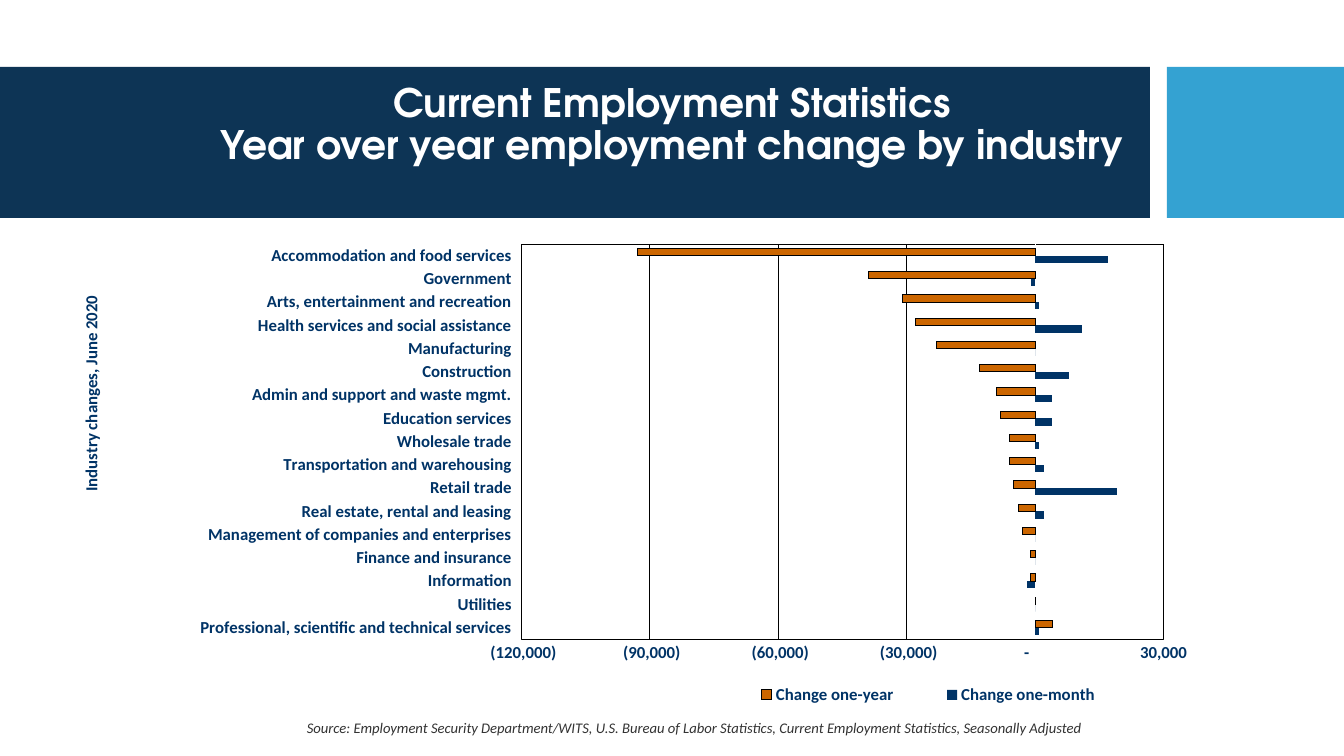
from dataclasses import dataclass

from lxml import etree
from pptx import Presentation
from pptx.chart.data import CategoryChartData
from pptx.dml.color import RGBColor
from pptx.enum.chart import XL_CHART_TYPE, XL_LEGEND_POSITION, XL_TICK_LABEL_POSITION, XL_TICK_MARK
from pptx.enum.shapes import MSO_SHAPE
from pptx.enum.text import MSO_ANCHOR, PP_ALIGN
from pptx.oxml import parse_xml
from pptx.oxml.ns import nsdecls, qn
from pptx.util import Emu, Pt

RECTANGLE = MSO_SHAPE.RECTANGLE
CLUSTERED = XL_CHART_TYPE.BAR_CLUSTERED
BOTTOM = XL_LEGEND_POSITION.BOTTOM
LOW = XL_TICK_LABEL_POSITION.LOW
NO_TICK = XL_TICK_MARK.NONE
MIDDLE, TOP = MSO_ANCHOR.MIDDLE, MSO_ANCHOR.TOP
CENTER, LEFT = PP_ALIGN.CENTER, PP_ALIGN.LEFT

WHITE = RGBColor(0xFF, 0xFF, 0xFF)
BLACK = RGBColor(0x00, 0x00, 0x00)
GRAY = RGBColor(0x33, 0x33, 0x33)
BANNER_NAVY = RGBColor(0x0D, 0x34, 0x55)
SKY_BLUE = RGBColor(0x34, 0xA2, 0xD2)
CHART_NAVY = RGBColor(0x00, 0x33, 0x66)
ORANGE = RGBColor(0xCC, 0x66, 0x00)

EMU_PER_PX = 914400 / 100.8
NUMBER_FORMAT = r'_(* #,##0_);_(* \(#,##0\);_(* "-"??_);_(@_)'
CHART_FONT = {"name": "Calibri", "size": Pt(12), "bold": True}


@dataclass(frozen=True)
class Area:
    left: int
    top: int
    width: int
    height: int

    def emu(self) -> list[Emu]:
        return [px(n) for n in (self.left, self.top, self.width, self.height)]


@dataclass(frozen=True)
class Panel:
    area: Area
    color: RGBColor


@dataclass(frozen=True)
class Caption:
    area: Area
    text: str
    font: dict
    color: RGBColor
    align: PP_ALIGN
    anchor: MSO_ANCHOR
    line_spacing: float


@dataclass(frozen=True)
class Industry:
    name: str
    month: int
    year: int


PANELS = [
    Panel(Area(0, 67, 1150, 151), BANNER_NAVY),
    Panel(Area(1167, 67, 177, 151), SKY_BLUE),
]
CAPTIONS = [
    Caption(
        Area(142, 64, 1060, 123),
        "Current Employment Statistics\vYear over year employment change by industry",
        {"name": "TeX Gyre Adventor", "size": Pt(28), "bold": True},
        WHITE, CENTER, MIDDLE, 0.9,
    ),
    Caption(
        Area(297, 714, 863, 28),
        "Source: Employment Security Department/WITS, U.S. Bureau of Labor Statistics, "
        "Current Employment Statistics, Seasonally Adjusted",
        {"name": "Calibri", "size": Pt(10.5), "italic": True},
        GRAY, LEFT, TOP, 1.0,
    ),
]
CHART_AREA = Area(65, 235, 1159, 479)

# Bottom to top on the chart
INDUSTRIES = [
    Industry("Professional, scientific and technical services", 1000, 4000),
    Industry("Utilities", 0, 0),
    Industry("Information", -2000, -1000),
    Industry("Finance and insurance", 0, -1000),
    Industry("Management of companies and enterprises", 0, -3000),
    Industry("Real estate, rental and leasing", 2000, -4000),
    Industry("Retail trade", 19000, -5000),
    Industry("Transportation and warehousing", 2000, -6000),
    Industry("Wholesale trade", 1000, -6000),
    Industry("Education services", 4000, -8000),
    Industry("Admin and support and waste mgmt.", 4000, -9000),
    Industry("Construction", 8000, -13000),
    Industry("Manufacturing", 0, -23000),
    Industry("Health services and social assistance", 11000, -28000),
    Industry("Arts, entertainment and recreation", 1000, -31000),
    Industry("Government", -1000, -39000),
    Industry("Accommodation and food services", 17000, -93000),
]


def px(length: int) -> Emu:
    return Emu(round(length * EMU_PER_PX))


def style_font(font, values: dict, color: RGBColor) -> None:
    for key, value in values.items():
        setattr(font, key, value)
    font.color.rgb = color


def add_panel(page, panel: Panel) -> None:
    box = page.shapes.add_shape(RECTANGLE, *panel.area.emu())
    box.shadow.inherit = False
    box.fill.solid()
    box.fill.fore_color.rgb = panel.color
    box.line.fill.background()


def add_caption(page, caption: Caption) -> None:
    frame = page.shapes.add_textbox(*caption.area.emu()).text_frame
    frame.word_wrap = True
    frame.vertical_anchor = caption.anchor
    para = frame.paragraphs[0]
    para.text = caption.text
    para.alignment = caption.align
    para.line_spacing = caption.line_spacing
    for span in para.runs:
        style_font(span.font, caption.font, caption.color)


def set_layout(parent, before: tuple, **values) -> None:
    """Place a chart part by fractions of the chart area."""
    for old in parent.findall(qn("c:layout")):
        parent.remove(old)
    layout = parse_xml(f"<c:layout {nsdecls('c')}><c:manualLayout/></c:layout>")
    for tag, value in values.items():
        etree.SubElement(layout[0], qn(f"c:{tag}"), val=str(value))
    index = max((i + 1 for i, child in enumerate(parent)
                 if child.tag in map(qn, before)), default=0)
    parent.insert(index, layout)


def add_employment_chart(page) -> None:
    data = CategoryChartData(number_format="#,##0")
    data.categories = [industry.name for industry in INDUSTRIES]
    data.add_series("Change one-month", [industry.month for industry in INDUSTRIES])
    data.add_series("Change one-year", [industry.year for industry in INDUSTRIES])
    chart = page.shapes.add_chart(CLUSTERED, *CHART_AREA.emu(), data).chart
    style_font(chart.font, CHART_FONT, CHART_NAVY)
    chart.has_title = False

    # Bars
    plot = chart.plots[0]
    plot.gap_width, plot.overlap, plot.vary_by_categories = 122, 0, False
    for series, color in zip(plot.series, (CHART_NAVY, ORANGE)):
        series.invert_if_negative = False
        series.format.fill.solid()
        series.format.fill.fore_color.rgb = color
    year_line = plot.series[1].format.line
    year_line.color.rgb, year_line.width = BLACK, Pt(0)

    # Axes
    industries, change = chart.category_axis, chart.value_axis
    for axis in (industries, change):
        axis.major_tick_mark = axis.minor_tick_mark = NO_TICK
        style_font(axis.tick_labels.font, CHART_FONT, CHART_NAVY)
    industries.tick_label_position = LOW
    industries.format.line.color.rgb, industries.format.line.width = WHITE, Pt(0.75)
    title = industries.axis_title
    title.text_frame.text = "Industry changes, June 2020"
    style_font(title.text_frame.paragraphs[0].runs[0].font, CHART_FONT, CHART_NAVY)
    set_layout(title._element, ("c:tx",), xMode="edge", yMode="edge", x=0.01, y=0.12)

    change.minimum_scale, change.maximum_scale, change.major_unit = -120000, 30000, 30000
    change.tick_labels.number_format = NUMBER_FORMAT
    change.tick_labels.number_format_is_linked = False
    change.format.line.fill.background()
    grid = change.major_gridlines.format.line
    grid.color.rgb, grid.width = BLACK, Pt(0.75)

    # Legend and framed plot area
    chart.has_legend = True
    chart.legend.position = BOTTOM
    chart.legend.include_in_layout = False
    style_font(chart.legend.font, CHART_FONT, CHART_NAVY)
    set_layout(chart.legend._element, ("c:legendPos",),
               xMode="edge", yMode="edge", x=0.56, y=0.93, w=0.37, h=0.06)
    area = plot._element.getparent()
    set_layout(area, (), layoutTarget="inner", xMode="edge", yMode="edge",
               x=0.394, y=0.019, w=0.554, h=0.825)
    area.append(parse_xml(
        f'<c:spPr {nsdecls("c", "a")}><a:noFill/><a:ln w="9525"><a:solidFill>'
        f'<a:srgbClr val="{BLACK}"/></a:solidFill></a:ln></c:spPr>'))


def main() -> None:
    deck = Presentation()
    deck.slide_width, deck.slide_height = px(1344), px(756)
    page = deck.slides.add_slide(deck.slide_layouts[6])
    for panel in PANELS:
        add_panel(page, panel)
    for caption in CAPTIONS:
        add_caption(page, caption)
    add_employment_chart(page)
    deck.save("out.pptx")


if __name__ == "__main__":
    main()
